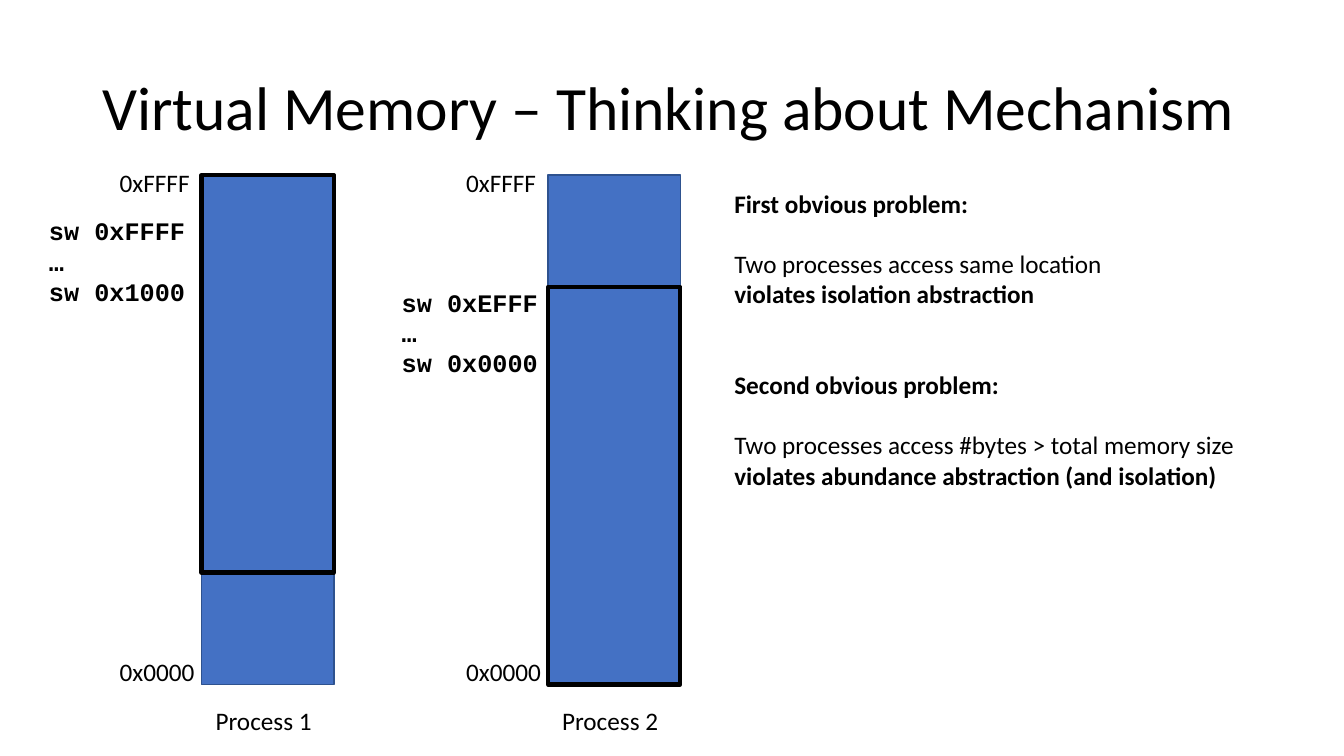
from dataclasses import dataclass

from pptx import Presentation
from pptx import util as u
from pptx.dml.color import RGBColor
from pptx.enum import shapes, text

Pt = u.Pt


@dataclass(frozen=True)
class Theme:
    ink: RGBColor = RGBColor(0x00, 0x00, 0x00)
    bar: RGBColor = RGBColor(0x44, 0x71, 0xC4)
    edge: RGBColor = RGBColor(0x2E, 0x52, 0x8F)
    sans: str = "Calibri"
    mono: str = "Courier New"
    title: int = 44
    body: int = 18


THEME = Theme()


def add_text(slide, box, lines, size=THEME.body, font=THEME.sans,
             first=1, lead=None):
    """Place lines in box; each line is (space before, [(words, bold)])."""
    frame = slide.shapes.add_textbox(*map(Pt, box)).text_frame
    frame.word_wrap = True
    frame.auto_size = text.MSO_AUTO_SIZE.NONE
    frame.vertical_anchor = text.MSO_ANCHOR.TOP
    frame.margin_left = Pt(1)
    frame.margin_top = frame.margin_right = frame.margin_bottom = 0
    for i, (gap, runs) in enumerate(lines):
        par = frame.paragraphs[0] if i == 0 else frame.add_paragraph()
        par.space_before = Pt(gap if i else first)
        if lead:
            par.line_spacing = Pt(lead)
        for words, bold in runs:
            run = par.add_run()
            run.text = words
            run.font.size = Pt(size)
            run.font.name = font
            run.font.bold = bold
            run.font.color.rgb = THEME.ink


def add_bar(slide, box, color, width):
    bar = slide.shapes.add_shape(shapes.MSO_SHAPE.RECTANGLE, *map(Pt, box))
    bar.shadow.inherit = False
    bar.fill.solid()
    bar.fill.fore_color.rgb = THEME.bar
    bar.line.color.rgb = color
    bar.line.width = Pt(width)


def add_title(slide, box, words):
    add_text(slide, box, [(0, [(words, False)])], THEME.title)


def add_memory(slide, box, name, ends, used, start, code_left):
    """One address space: the whole bar, its used part and its labels."""
    left, top, width, height = box
    add_bar(slide, box, THEME.edge, 1)
    add_bar(slide, (left, top + start, width, used), THEME.ink, 3)

    # Address labels and process name
    side = left - 59.5
    add_text(slide, (side, top - 5.5, 56, 24), [(0, [("0xFFFF", False)])])
    low = top + height
    add_text(slide, (side, low - 17, 58, 20), [(0, [("0x0000", False)])],
             first=0, lead=18.1)
    add_text(slide, (left + 9, low + 18, 76, 20), [(0, [(name, False)])],
             first=0, lead=18.1)

    # Store instructions
    code = [f"sw {ends[0]}", "…", f"sw {ends[1]}"]
    add_text(slide, (code_left, top + max(start, 29), 102, 67),
             [(0, [(line, True)]) for line in code], font=THEME.mono)


def add_note(slide, box, head, fact, claim):
    add_text(slide, box, [(0, [(head, True)]),
                          (21.3, [(fact, False)]),
                          (0, [(claim, True)])])


def main():
    deck = Presentation()
    deck.slide_width, deck.slide_height = Pt(960), Pt(540)
    slide = deck.slides.add_slide(deck.slide_layouts[6])

    # Title
    add_title(slide, (72, 49, 830, 54),
              "Virtual Memory – Thinking about Mechanism")

    # Address spaces
    top, width, height, used = 125, 94.5, 364, 284
    add_memory(slide, (144, top, width, height), "Process 1",
               ("0xFFFF", "0x1000"), used, 0, 34)
    add_memory(slide, (391.5, top, width, height), "Process 2",
               ("0xEFFF", "0x0000"), used, height - used, 286)

    # Problems
    notes = [
        ("First obvious problem:", "Two processes access same location",
         "violates isolation abstraction"),
        ("Second obvious problem:",
         "Two processes access #bytes > total memory size",
         "violates abundance abstraction (and isolation)"),
    ]
    for i, note in enumerate(notes):
        add_note(slide, (523.5, 134.5 + i * 129.5, 370, 89), *note)

    deck.save("out.pptx")


if __name__ == "__main__":
    main()
